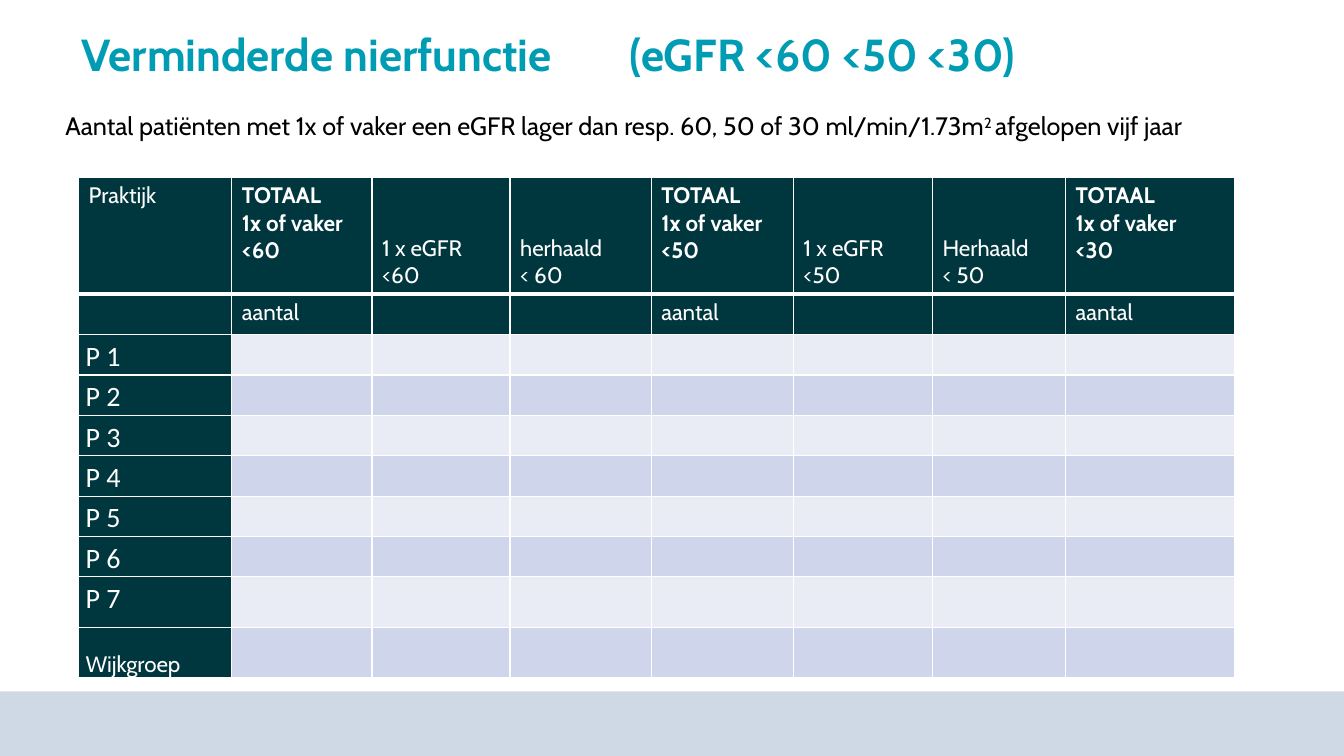
from lxml.etree import SubElement
from pptx import Presentation
from pptx.dml.color import RGBColor
from pptx.enum.shapes import MSO_SHAPE
from pptx.enum.text import MSO_ANCHOR
from pptx.oxml.ns import qn
from pptx.util import Inches, Pt

WHITE = RGBColor(0xFF, 0xFF, 0xFF)
BLACK = RGBColor(0, 0, 0)
TEAL = RGBColor(0x00, 0x9C, 0xB4)
DARK = RGBColor(0x00, 0x37, 0x3E)
FOOTER = RGBColor(0xCE, 0xD9, 0xE5)
BANDS = (RGBColor(0xE9, 0xEB, 0xF5), RGBColor(0xCF, 0xD5, 0xEA))

COLUMN_WIDTHS = (1.52, 1.39, 1.37, 1.4, 1.41, 1.38, 1.32, 1.68)
ROW_HEIGHTS = (1.16,) + (0.4,) * 7 + (0.5,) * 2
HEADERS = (
    ("Praktijk",),
    ("TOTAAL", "1x of vaker <60"),
    ("1 x eGFR", "<60"),
    ("herhaald", "< 60"),
    ("TOTAAL", "1x of vaker <50"),
    ("1 x eGFR <50",),
    ("Herhaald", "< 50"),
    ("TOTAAL", "1x of vaker", "<30"),
)
PRACTICES = [f"P {number}" for number in range(1, 8)] + ["Wijkgroep"]


def style_font(paragraph, size, color, bold=False, name="Cabin"):
    """Set the font of a whole paragraph."""
    font = paragraph.font
    font.name, font.size, font.bold = name, Pt(size), bold
    font.color.rgb = color


def add_text_box(slide, left, top, width, height):
    """Add a wrapping text box and return its first paragraph."""
    frame = slide.shapes.add_textbox(
        Inches(left), Inches(top), Inches(width), Inches(height)).text_frame
    frame.word_wrap = True
    return frame.paragraphs[0]


def add_title(slide):
    """Add the title, its two parts set apart by a tab stop."""
    paragraph = add_text_box(slide, 0.71, 0.28, 11.54, 0.59)
    paragraph.line_spacing = 0.9
    tabs = SubElement(paragraph._p.get_or_add_pPr(), qn("a:tabLst"))
    SubElement(tabs, qn("a:tab"), pos=str(Inches(5.44)), algn="l")
    style_font(paragraph, 32, TEAL, bold=True)
    paragraph.add_run().text = "Verminderde nierfunctie\t(eGFR <60 <50 <30)"


def add_subtitle(slide):
    """Add the explanatory line with its raised exponent."""
    paragraph = add_text_box(slide, 0.55, 1.05, 12.39, 0.4)
    style_font(paragraph, 18, BLACK)
    parts = (
        ("Aantal patiënten met 1x of vaker een eGFR lager dan resp. "
         "60, 50 of 30 ml/min/1.73m", 0),
        ("2 ", 30000),
        ("afgelopen vijf jaar", 0),
    )
    for text, baseline in parts:
        run = paragraph.add_run()
        run.text = text
        run._r.get_or_add_rPr().set("baseline", str(baseline))


def add_footer_band(slide):
    """Add the plain band along the bottom edge."""
    band = slide.shapes.add_shape(
        MSO_SHAPE.RECTANGLE, 0, Inches(6.86), Inches(13.33), Inches(0.64))
    band.shadow.inherit = False
    band.fill.solid()
    band.fill.fore_color.rgb = FOOTER
    band.line.fill.background()


def style_cell(cell, color, top=1, bottom=1):
    """Give a cell white borders and a solid fill."""
    properties = cell._tc.get_or_add_tcPr()
    for side, width in (("L", 1), ("R", 1), ("T", top), ("B", bottom)):
        line = SubElement(properties, qn(f"a:ln{side}"), w=str(Pt(width)))
        fill = SubElement(line, qn("a:solidFill"))
        SubElement(fill, qn("a:srgbClr"), val=str(WHITE))
    cell.fill.solid()
    cell.fill.fore_color.rgb = color


def fill_heading(cell, lines):
    """Write the lines of a column heading."""
    total = lines[0] == "TOTAAL"
    cell.text = "\n".join(lines)
    if not total and lines[0] != "Praktijk":
        cell.vertical_anchor = MSO_ANCHOR.BOTTOM
    for paragraph in cell.text_frame.paragraphs:
        style_font(paragraph, 16, WHITE, bold=total)


def fill_practice(cell, name):
    """Write the name of a practice or of the whole group."""
    cell.text = name
    cell.margin_left = cell.margin_right = Inches(0.07)
    cell.margin_top = cell.margin_bottom = 0
    paragraph = cell.text_frame.paragraphs[0]
    paragraph.line_spacing = 1.15
    paragraph.space_after = Pt(10)
    if name == "Wijkgroep":
        cell.vertical_anchor = MSO_ANCHOR.BOTTOM
        style_font(paragraph, 16, WHITE)
    else:
        style_font(paragraph, 20, WHITE, name="Calibri")


def add_practice_table(slide):
    """Add the table of practices against eGFR limits."""
    table = slide.shapes.add_table(
        len(ROW_HEIGHTS), len(COLUMN_WIDTHS), Inches(0.78), Inches(1.76),
        Inches(sum(COLUMN_WIDTHS)), Inches(sum(ROW_HEIGHTS))).table
    table.first_row = table.horz_banding = False
    for column, width in zip(table.columns, COLUMN_WIDTHS):
        column.width = Inches(width)
    for index, (row, height) in enumerate(zip(table.rows, ROW_HEIGHTS)):
        row.height = Inches(height)
        for position, cell in enumerate(row.cells):
            dark = index < 2 or position == 0
            style_cell(cell, DARK if dark else BANDS[index % 2],
                       top=3 if index == 1 else 1,
                       bottom=3 if index == 0 else 1)
    for position, lines in enumerate(HEADERS):
        fill_heading(table.cell(0, position), lines)
        if lines[0] == "TOTAAL":
            unit = table.cell(1, position)
            unit.text = "aantal"
            style_font(unit.text_frame.paragraphs[0], 16, WHITE)
    for index, name in enumerate(PRACTICES, start=2):
        fill_practice(table.cell(index, 0), name)


def main():
    """Build the slide and save it."""
    presentation = Presentation()
    presentation.slide_width = Inches(13.33)
    presentation.slide_height = Inches(7.5)
    slide = presentation.slides.add_slide(presentation.slide_layouts[6])
    add_footer_band(slide)
    add_title(slide)
    add_subtitle(slide)
    add_practice_table(slide)
    presentation.save("out.pptx")


if __name__ == "__main__":
    main()
